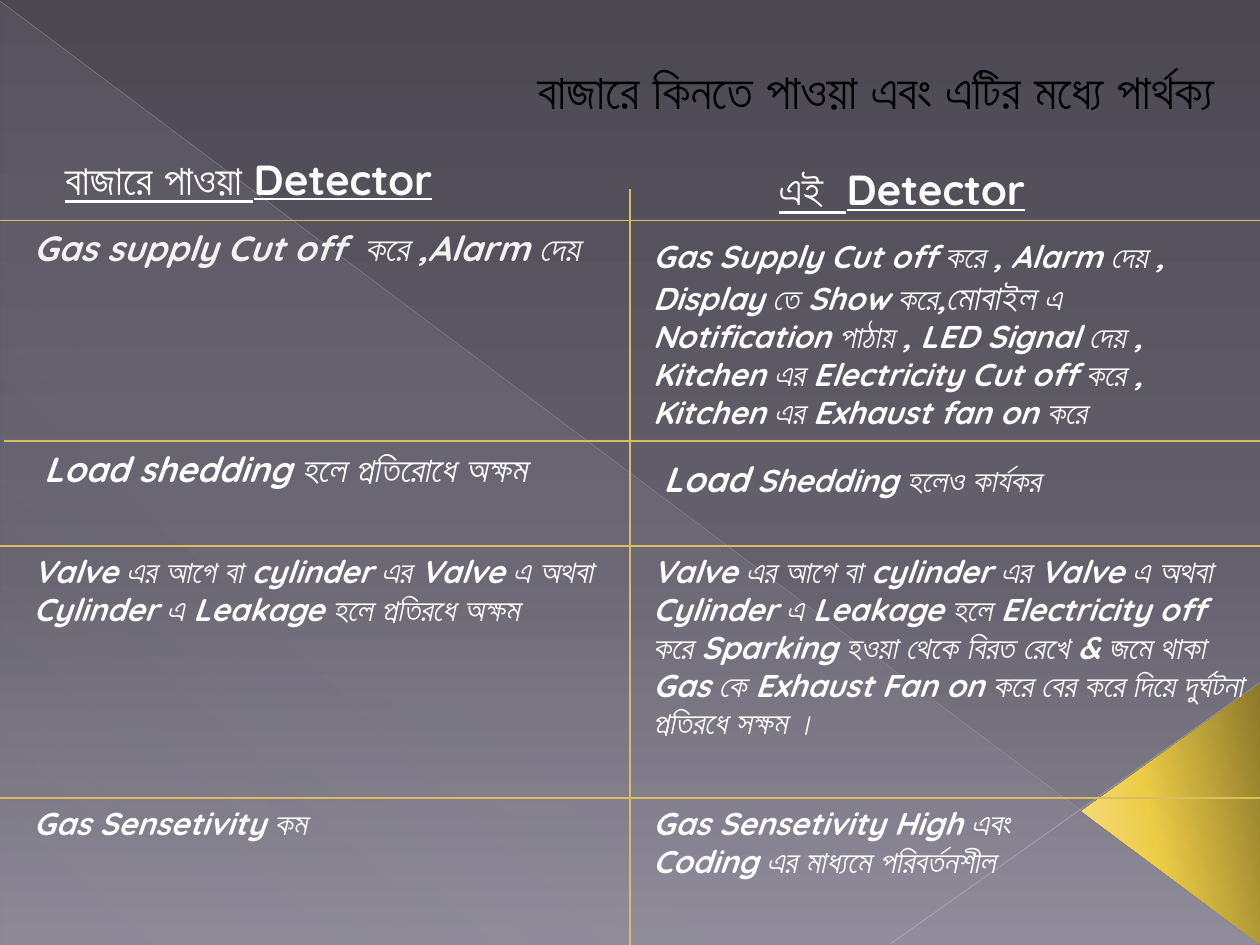
from dataclasses import dataclass

from lxml import etree
from pptx import Presentation
from pptx.dml.color import RGBColor
from pptx.enum import shapes, text
from pptx.oxml import ns
from pptx.util import Inches, Pt

COLUMNS, ROWS = 120, 90
CELL = Inches(10) / COLUMNS
MIDDLE, RIGHT_TEXT, LEFT_TEXT = 60, 61, 2
HEADER_ROW, LOAD_ROW, VALVE_ROW, SENSITIVITY_ROW = 21, 42, 52, 76
FONT = "Quicksand"
WHITE, GOLD = "FFFFFF", "D8BF5C"


@dataclass
class Stop:
    percent: int
    color: str
    opacity: int = 100


@dataclass
class Rule:
    start: tuple[float, float]
    end: tuple[float, float]
    color: str = GOLD
    width: float = 0.75
    opacity: int = 100


@dataclass
class Passage:
    column: float
    row: float
    width: float
    height: float
    paragraphs: list[list[tuple[str, int]]]
    color: str = WHITE
    italic: bool = True
    underline: bool = False
    wrap: bool = True
    right: bool = False


def grid(count: float) -> int:
    return round(count * CELL)


def rgb(color: str) -> RGBColor:
    return RGBColor.from_string(color)


def add_opacity(color_element, percent: int) -> None:
    if percent < 100:
        etree.SubElement(color_element, ns.qn("a:alpha"), val=str(percent * 1000))


def fill_gradient(fill, owner, stops: list[Stop], angle: int) -> None:
    fill.gradient()
    fill.gradient_angle = 360 - angle
    stop_list = owner.find(".//" + ns.qn("a:gsLst"))
    for default_stop in list(stop_list):
        stop_list.remove(default_stop)
    for stop in stops:
        entry = etree.SubElement(stop_list, ns.qn("a:gs"), pos=str(stop.percent * 1000))
        color = etree.SubElement(entry, ns.qn("a:srgbClr"), val=stop.color)
        add_opacity(color, stop.opacity)


def draw_shape(slide, kind, box: tuple, stops: list[Stop], angle: int):
    shape = slide.shapes.add_shape(kind, *map(grid, box))
    shape.shadow.inherit = False
    shape.line.fill.background()
    fill_gradient(shape.fill, shape._element, stops, angle)
    return shape


def draw_rule(slide, rule: Rule) -> None:
    line = slide.shapes.add_connector(
        shapes.MSO_CONNECTOR.STRAIGHT, *map(grid, rule.start + rule.end)
    )
    line.line.color.rgb = rgb(rule.color)
    line.line.width = Pt(rule.width)
    add_opacity(line._element.find(".//" + ns.qn("a:srgbClr")), rule.opacity)
    etree.SubElement(line._element.spPr, ns.qn("a:effectLst"))


def draw_passage(slide, passage: Passage) -> None:
    box = (passage.column, passage.row, passage.width, passage.height)
    frame = slide.shapes.add_textbox(*map(grid, box)).text_frame
    frame.word_wrap = passage.wrap
    if passage.right:
        frame.vertical_anchor = text.MSO_ANCHOR.BOTTOM
        frame.margin_right = Inches(0.2)
    else:
        frame.auto_size = text.MSO_AUTO_SIZE.SHAPE_TO_FIT_TEXT
    for index, pieces in enumerate(passage.paragraphs):
        paragraph = frame.add_paragraph() if index else frame.paragraphs[0]
        paragraph.alignment = text.PP_ALIGN.RIGHT if passage.right else text.PP_ALIGN.LEFT
        for words, size in pieces:
            run = paragraph.add_run()
            run.text = words
            run.font.name = FONT
            run.font.size = Pt(size)
            run.font.bold = True
            run.font.italic = passage.italic
            run.font.underline = passage.underline
            run.font.color.rgb = rgb(passage.color)


BACKDROP_RULES = [
    Rule((0, 0.1), (119.9, 89.9), "C0BFC2", 0.39, 35),
    Rule((120, 65), (84.8, 89.9), "C7C6C8", 0.47, 45),
]

TABLE_RULES = [
    Rule((MIDDLE, 18), (MIDDLE, ROWS)),
    Rule((0, HEADER_ROW), (COLUMNS, HEADER_ROW)),
    Rule((0.4, LOAD_ROW), (COLUMNS, LOAD_ROW)),
    Rule((0, VALVE_ROW), (COLUMNS, VALVE_ROW)),
    Rule((0, SENSITIVITY_ROW), (COLUMNS, SENSITIVITY_ROW)),
]

PASSAGES = [
    Passage(3, 2, 115, 10, [[("বাজারে কিনতে পাওয়া এবং এটির মধ্যে পার্থক্য", 28)]],
            color="000000", italic=False, right=True),
    Passage(5, 14, 55, 6, [[("বাজারে পাওয়া Detector", 24)]], italic=False, underline=True),
    Passage(73, 15, 27.6, 6, [[("এই  Detector", 24)]],
            italic=False, underline=True, wrap=False),
    Passage(LEFT_TEXT, HEADER_ROW, 58, 8,
            [[("Gas supply Cut off  করে ,Alarm দেয়", 20)]], color="F2F2F2"),
    Passage(RIGHT_TEXT, 22, 59, 19.8, [
        [("Gas Supply Cut off করে , Alarm দেয় , Display তে Show করে,", 18),
         ("মোবাইল", 20),
         (" এ Notification পাঠায় , LED Signal দেয় , "
          "Kitchen এর Electricity Cut off করে ,", 18)],
        [("Kitchen এর Exhaust fan on করে", 18)],
    ]),
    Passage(3, LOAD_ROW, 60, 9.2, [[("Load shedding হলে প্রতিরোধে অক্ষম", 20)]]),
    Passage(62, 43, 46.3, 5.3, [[("Load", 20), (" Shedding হলেও কার্যকর", 18)]], wrap=False),
    Passage(LEFT_TEXT, VALVE_ROW, 58, 12.1, [
        [("Valve এর আগে বা cylinder এর Valve এ অথবা "
          "Cylinder এ Leakage হলে প্রতিরধে অক্ষম", 18)]]),
    Passage(RIGHT_TEXT, VALVE_ROW, 59, 23, [
        [("Valve এর আগে বা cylinder এর Valve এ অথবা "
          "Cylinder এ Leakage হলে Electricity off করে Sparking হওয়া থেকে বিরত রেখে "
          "& জমে থাকা Gas কে Exhaust Fan on করে বের করে দিয়ে দুর্ঘটনা "
          "প্রতিরধে সক্ষম ।", 18)]]),
    Passage(LEFT_TEXT, SENSITIVITY_ROW, 30.5, 4.8, [[("Gas Sensetivity কম", 18)]], wrap=False),
    Passage(RIGHT_TEXT, SENSITIVITY_ROW, 46, 12.1,
            [[("Gas Sensetivity High এবং Coding এর মাধ্যমে পরিবর্তনশীল", 18)]]),
]


def main() -> None:
    deck = Presentation()
    deck.slide_width, deck.slide_height = grid(COLUMNS), grid(ROWS)
    slide = deck.slides.add_slide(deck.slide_layouts[6])
    fill_gradient(slide.background.fill, slide._element,
                  [Stop(0, "4B4852"), Stop(60, "64606D"), Stop(100, "8C8896")], 90)
    draw_shape(slide, shapes.MSO_SHAPE.RIGHT_TRIANGLE, (0.1, 0.2, 119.8, 89.8),
               [Stop(0, "C9C2D1", 10), Stop(70, "C9C2D1", 8), Stop(100, "C9C2D1", 1)], 133)
    for rule in BACKDROP_RULES:
        draw_rule(slide, rule)
    corner = draw_shape(slide, shapes.MSO_SHAPE.ISOSCELES_TRIANGLE, (99.1, 69, 24.9, 17),
                        [Stop(0, "8B782B"), Stop(60, "EDCC47"), Stop(100, "F9DF8E")], 258)
    corner.adjustments[0] = 0.51
    corner.rotation = 270
    for rule in TABLE_RULES:
        draw_rule(slide, rule)
    for passage in PASSAGES:
        draw_passage(slide, passage)
    deck.save("out.pptx")


if __name__ == "__main__":
    main()
